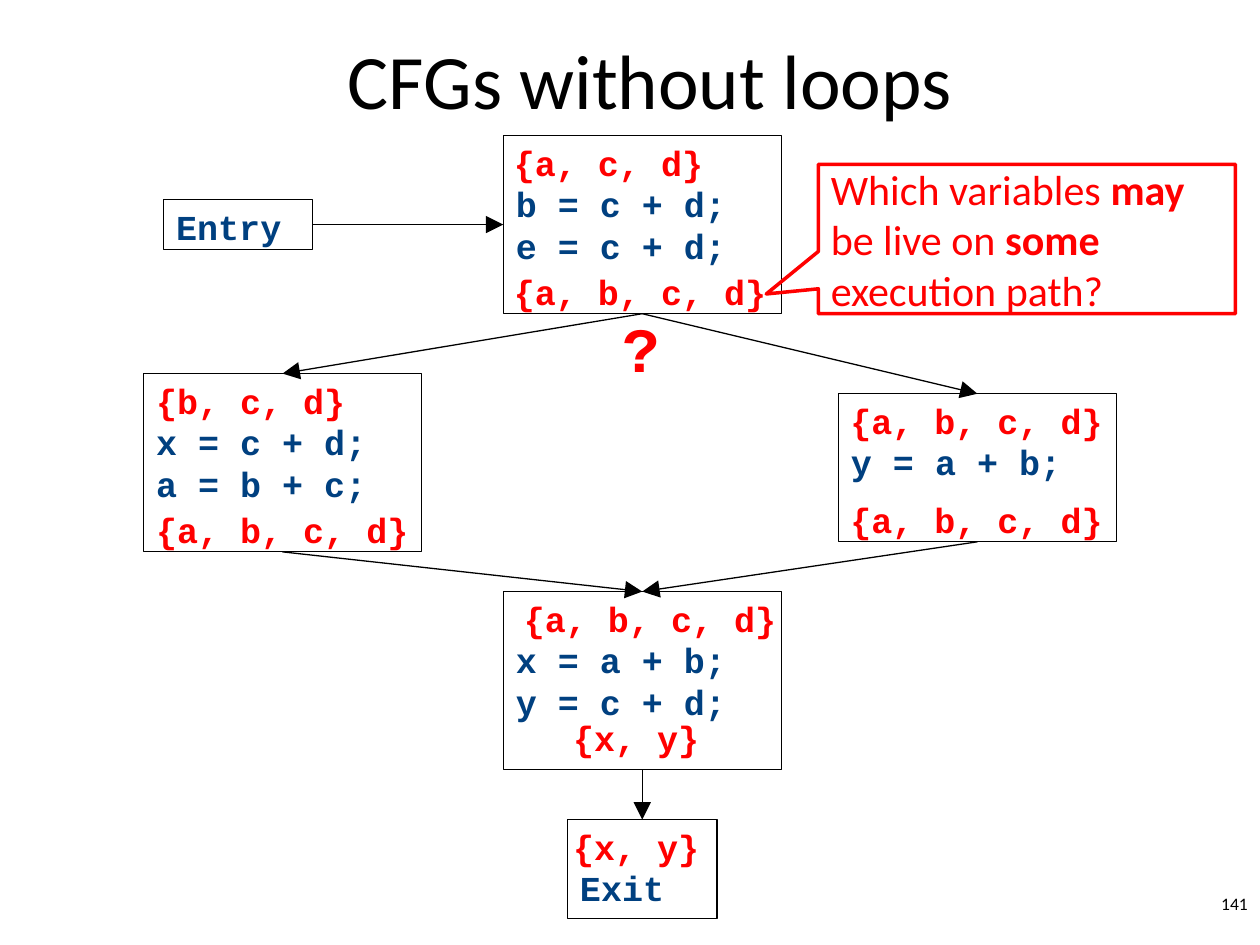
from dataclasses import dataclass

from lxml import etree
from pptx import Presentation
from pptx.dml import color
from pptx.enum import shapes, text
from pptx.oxml import ns
from pptx.util import Inches, Pt

COLUMNS, ROWS = 100, 75
WIDTH, HEIGHT = Inches(10), Inches(7.5)
BLACK, NAVY, RED = "000000", "004080", "FF0000"
BODY, CODE = "Calibri", "Courier New"
LABEL_ROWS = 3.9
CODE_INSET = 0.05
LINE_HEIGHT = 0.32
TOP, LEFT, BOTTOM, RIGHT = range(4)


@dataclass(frozen=True)
class Area:
    column: float
    row: float
    columns: float
    rows: float

    def lengths(self) -> list[int]:
        x, y = WIDTH / COLUMNS, HEIGHT / ROWS
        return [round(n) for n in (self.column * x, self.row * y, self.columns * x, self.rows * y)]


@dataclass(frozen=True)
class Block:
    name: str
    area: Area
    code: str
    has_label: bool = True


@dataclass(frozen=True)
class Edge:
    start: str
    start_side: int
    end: str
    end_side: int


@dataclass(frozen=True)
class LiveSet:
    variables: str
    column: float
    row: float
    columns: float = 22.5


BLOCKS = [
    Block("exit", Area(45.05, 65.05, 11.85, 7.85), "Exit"),
    Block("join", Area(39.95, 46.95, 22.05, 14.15), "x = a + b;\ny = c + d;"),
    Block("right", Area(66.55, 31.25, 22.05, 11.75), "y = a + b;"),
    Block("left", Area(11.4, 29.65, 22.05, 14.15), "x = c + d;\na = b + c;"),
    Block("branch", Area(39.95, 10.75, 22.05, 14.15), "b = c + d;\ne = c + d;"),
    Block("entry", Area(13, 15.85, 11.8, 3.95), "Entry", has_label=False),
]

EDGES = [
    Edge("branch", BOTTOM, "left", TOP),
    Edge("branch", BOTTOM, "right", TOP),
    Edge("left", BOTTOM, "join", TOP),
    Edge("right", BOTTOM, "join", TOP),
    Edge("join", BOTTOM, "exit", TOP),
    Edge("entry", RIGHT, "branch", LEFT),
]

LIVE_SETS = [
    LiveSet("{x, y}", 44.5, 65.05, 13),
    LiveSet("{x, y}", 44.5, 56.4, 13),
    LiveSet("{a, b, c, d}", 40.6, 46.9),
    LiveSet("{a, b, c, d}", 11.4, 39.9),
    LiveSet("{a, b, c, d}", 66.5, 39.1),
    LiveSet("{a, b, c, d}", 66.5, 31.2),
    LiveSet("{b, c, d}", 11.4, 29.6),
    LiveSet("{a, b, c, d}", 39.8, 21),
    LiveSet("{a, c, d}", 39.8, 10.7),
]


def rgb(value: str) -> color.RGBColor:
    return color.RGBColor.from_string(value)


def write(box, content, *, font=BODY, size=20, fill=BLACK, bold=False, wrap=True,
          align=text.PP_ALIGN.LEFT, anchor=text.MSO_ANCHOR.TOP, top=CODE_INSET) -> None:
    frame = box.text_frame
    frame.word_wrap = wrap
    frame.vertical_anchor = anchor
    frame.margin_top = Inches(top)
    lines = [[(line, bold)] for line in content.split("\n")] if isinstance(content, str) else [content]
    for index, line in enumerate(lines):
        para = frame.add_paragraph() if index else frame.paragraphs[0]
        para.alignment = align
        for words, heavy in line:
            span = para.add_run()
            span.text = words
            span.font.name = font
            span.font.size = Pt(size)
            span.font.bold = heavy
            span.font.color.rgb = rgb(fill)


def add_text(page, area: Area, content: str, **style) -> None:
    write(page.shapes.add_textbox(*area.lengths()), content, **style)


def add_outline(page, kind, area: Area, stroke: str, weight: float):
    box = page.shapes.add_shape(kind, *area.lengths())
    box.shadow.inherit = False
    box.fill.background()
    box.line.color.rgb = rgb(stroke)
    box.line.width = Pt(weight)
    return box


def add_block(page, block: Block):
    box = add_outline(page, shapes.MSO_SHAPE.RECTANGLE, block.area, BLACK, 0.75)
    top = CODE_INSET + LINE_HEIGHT * block.has_label
    write(box, block.code, font=CODE, fill=NAVY, bold=True, top=top)
    return box


def add_edge(page, edge: Edge, boxes: dict) -> None:
    arrow = page.shapes.add_connector(shapes.MSO_CONNECTOR.STRAIGHT, 0, 0, 0, 0)
    arrow.begin_connect(boxes[edge.start], edge.start_side)
    arrow.end_connect(boxes[edge.end], edge.end_side)
    arrow.line.color.rgb = rgb(BLACK)
    arrow.line.width = Pt(0.75)
    outline = arrow._element.spPr.find(ns.qn("a:ln"))
    etree.SubElement(outline, ns.qn("a:tailEnd"), type="triangle", w="lg", len="lg")
    etree.SubElement(arrow._element.spPr, ns.qn("a:effectLst"))


def add_question(page) -> None:
    add_text(page, Area(48.4, 24.1, 5.5, 7.1), "?", font=CODE, size=36, fill=RED, bold=True)
    callout = add_outline(page, shapes.MSO_SHAPE.RECTANGULAR_CALLOUT, Area(64.95, 13.05, 33.1, 11.85), RED, 2)
    callout.adjustments[0] = -0.625
    callout.adjustments[1] = 0.368
    spans = [("Which variables ", False), ("may", True), (" be live on ", False),
             ("some", True), (" execution path?", False)]
    write(callout, spans, size=24, fill=RED, anchor=text.MSO_ANCHOR.MIDDLE)


def main() -> None:
    deck = Presentation()
    deck.slide_width, deck.slide_height = WIDTH, HEIGHT
    page = deck.slides.add_slide(deck.slide_layouts[6])
    add_text(page, Area(9.1, 0, 85, 12.5), "CFGs without loops", size=44,
             align=text.PP_ALIGN.CENTER, anchor=text.MSO_ANCHOR.MIDDLE)
    add_text(page, Area(79.2, 70.4, 20.8, 3), "141", size=10, align=text.PP_ALIGN.RIGHT)
    boxes = {block.name: add_block(page, block) for block in BLOCKS}
    for edge in EDGES:
        add_edge(page, edge, boxes)
    for live in LIVE_SETS:
        add_text(page, Area(live.column, live.row, live.columns, LABEL_ROWS), live.variables,
                 font=CODE, fill=RED, bold=True)
    add_question(page)
    deck.save("out.pptx")


if __name__ == "__main__":
    main()
